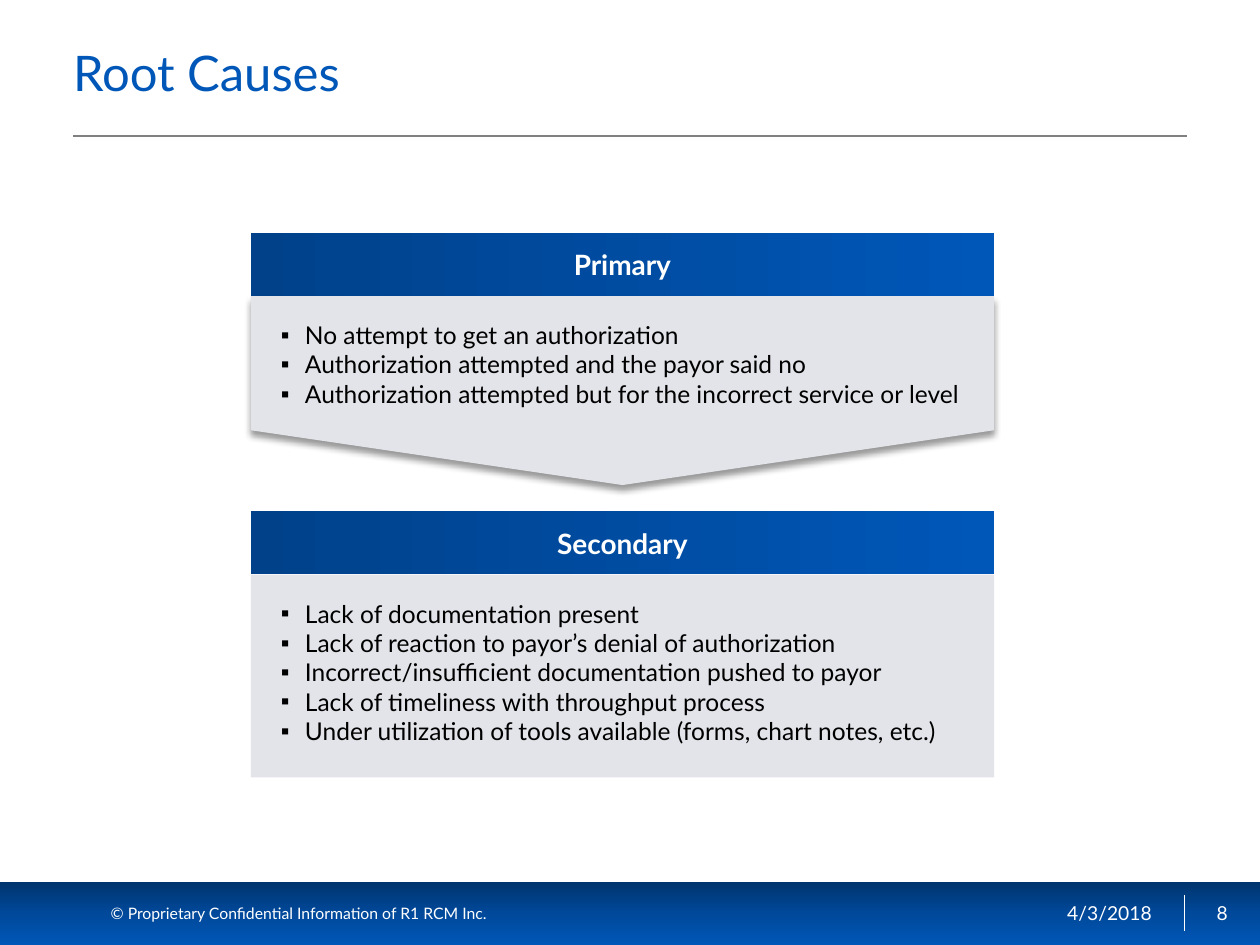
import pptx
import pptx.dml.color
import pptx.enum.shapes
import pptx.enum.text
import pptx.oxml
import pptx.oxml.ns
import pptx.util
from dataclasses import dataclass
from lxml import etree
from pptx.util import Inches

ALIGN = pptx.enum.text.PP_ALIGN
ANCHOR = pptx.enum.text.MSO_ANCHOR
SHAPE = pptx.enum.shapes.MSO_SHAPE
qn = pptx.oxml.ns.qn


@dataclass(frozen=True)
class Theme:
    font: str = "Lato"
    blue: str = "0057B8"
    white: str = "FFFFFF"
    black: str = "000000"
    rule: str = "808080"
    panel: str = "E3E4E9"
    header_gradient: tuple = ((0, "00418A"), (100, "0057B8"))
    footer_gradient: tuple = ((0, "00346D"), (50, "00499B"), (100, "0057B8"))
    title_size: float = 28
    header_size: float = 16
    list_size: float = 14
    footer_size: float = 11
    copyright_size: float = 9


THEME = Theme()
PANEL_LEFT, PANEL_WIDTH, HEADER_HEIGHT = 1.99, 5.9, 0.5

PRIMARY = [
    "No attempt to get an authorization",
    "Authorization attempted and the payor said no",
    "Authorization attempted but for the incorrect service or level",
]
SECONDARY = [
    "Lack of documentation present",
    "Lack of reaction to payor’s denial of authorization",
    "Incorrect/insufficient documentation pushed to payor",
    "Lack of timeliness with throughput process",
    "Under utilization of tools available (forms, chart notes, etc.)",
]


def rgb(color):
    return pptx.dml.color.RGBColor.from_string(color)


def place(shape, left, top, width, height):
    shape.left, shape.top = Inches(left), Inches(top)
    shape.width, shape.height = Inches(width), Inches(height)


def style(paragraph, size, color, align=ALIGN.LEFT, bold=False):
    paragraph.alignment = align
    font = paragraph.font
    font.name, font.size, font.bold = THEME.font, pptx.util.Pt(size), bold
    font.color.rgb = rgb(color)


def add_block(slide, kind, left, top, width, height):
    shape = slide.shapes.add_shape(
        kind, Inches(left), Inches(top), Inches(width), Inches(height))
    shape.shadow.inherit = False
    shape.line.fill.background()
    return shape


def fill_gradient(shape, stops, angle):
    shape.fill.gradient()
    # The public angle runs counter-clockwise
    shape.fill.gradient_angle = -angle % 360
    stop_list = shape.element.spPr.find(qn("a:gradFill")).find(qn("a:gsLst"))
    for stop in list(stop_list):
        stop_list.remove(stop)
    for position, color in stops:
        stop = etree.SubElement(stop_list, qn("a:gs"), pos=str(position * 1000))
        etree.SubElement(stop, qn("a:srgbClr"), val=color)


def add_line(slide, start, end, color, width):
    line = slide.shapes.add_connector(
        pptx.enum.shapes.MSO_CONNECTOR.STRAIGHT,
        *map(Inches, start), *map(Inches, end))
    line.line.color.rgb = rgb(color)
    line.line.width = pptx.util.Pt(width)
    etree.SubElement(line.element.spPr, qn("a:effectLst"))


def add_label(slide, box, text, size, align):
    label = slide.shapes.add_textbox(*map(Inches, box))
    frame = label.text_frame
    frame.word_wrap = True
    frame.vertical_anchor = ANCHOR.MIDDLE
    frame.text = text
    style(frame.paragraphs[0], size, THEME.white, align)


def add_header(slide, top, text):
    header = add_block(slide, SHAPE.PENTAGON, PANEL_LEFT, top, PANEL_WIDTH, HEADER_HEIGHT)
    header.adjustments[0] = 0
    fill_gradient(header, THEME.header_gradient, 0)
    frame = header.text_frame
    frame.vertical_anchor = ANCHOR.MIDDLE
    frame.text = text
    style(frame.paragraphs[0], THEME.header_size, THEME.white, ALIGN.CENTER, True)


def add_panel(slide, top, height, point):
    """A pentagon turned to point down; its box is given as it is seen."""
    left = PANEL_LEFT + (PANEL_WIDTH - height) / 2
    panel = add_block(slide, SHAPE.PENTAGON, left, top - (PANEL_WIDTH - height) / 2,
                      height, PANEL_WIDTH)
    panel.rotation = 90
    panel.adjustments[0] = point
    panel.fill.solid()
    panel.fill.fore_color.rgb = rgb(THEME.panel)
    return panel


def add_shadow(shape):
    effects = shape.element.spPr.find(qn("a:effectLst"))
    effects.append(pptx.oxml.parse_xml(
        f'<a:outerShdw {pptx.oxml.ns.nsdecls("a")} blurRad="{pptx.util.Pt(4)}" '
        f'dist="{pptx.util.Pt(3)}" dir="5400000" rotWithShape="0">'
        f'<a:srgbClr val="{THEME.black}"><a:alpha val="40000"/></a:srgbClr>'
        '</a:outerShdw>'))


def fill_list(placeholder, top, height, items):
    place(placeholder, 2.13, top, 5.98, height)
    # Bring the list in front of its panel
    placeholder.element.getparent().append(placeholder.element)
    frame = placeholder.text_frame
    frame.auto_size = pptx.enum.text.MSO_AUTO_SIZE.NONE
    frame.text = "\n".join(items)
    indent = Inches(0.19)
    for paragraph in frame.paragraphs:
        properties = paragraph._p.get_or_add_pPr()
        properties.set("marL", str(indent))
        properties.set("indent", str(-indent))
        etree.SubElement(properties, qn("a:buChar"), char="▪")
        paragraph.space_before = pptx.util.Pt(0)
        style(paragraph, THEME.list_size, THEME.black)


def fill_title(title, text):
    place(title, 0.48, 0.15, 8.94, 0.93)
    frame = title.text_frame
    frame.auto_size = pptx.enum.text.MSO_AUTO_SIZE.NONE
    frame.vertical_anchor = ANCHOR.MIDDLE
    frame.text = text
    frame.paragraphs[0].line_spacing = 0.8
    style(frame.paragraphs[0], THEME.title_size, THEME.blue)


def add_footer(slide):
    band = add_block(slide, SHAPE.RECTANGLE, 0, 7, 10.01, 0.51)
    fill_gradient(band, THEME.footer_gradient, 90)
    add_line(slide, (9.4, 7.1), (9.4, 7.39), THEME.white, 0.75)
    add_label(slide, (6.75, 7.03, 2.49, 0.43), "4/3/2018", THEME.footer_size, ALIGN.RIGHT)
    add_label(slide, (9.4, 7.03, 0.6, 0.43), "8", THEME.footer_size, ALIGN.CENTER)
    add_label(slide, (0.78, 7.12, 4.67, 0.25),
              "© Proprietary Confidential Information of R1 RCM Inc.",
              THEME.copyright_size, ALIGN.LEFT)


def main():
    presentation = pptx.Presentation()
    presentation.slide_width, presentation.slide_height = Inches(10), Inches(7.5)
    # The "Two Content" layout has a title and two lists
    slide = presentation.slides.add_slide(presentation.slide_layouts[3])
    title, primary_list, secondary_list = slide.placeholders

    # Title and footer
    add_footer(slide)
    add_line(slide, (0.58, 1.08), (9.42, 1.08), THEME.rule, 1)
    fill_title(title, "Root Causes")

    # Headers
    add_header(slide, 1.85, "Primary")
    add_header(slide, 4.06, "Secondary")

    # Secondary causes
    add_panel(slide, 4.56, 1.61, 0)
    fill_list(secondary_list, 4.7, 1.24, SECONDARY)

    # Primary causes, pointing to the secondary ones
    add_shadow(add_panel(slide, 2.35, 1.5, 0.29))
    fill_list(primary_list, 2.49, 0.86, PRIMARY)

    presentation.save("out.pptx")


if __name__ == "__main__":
    main()
